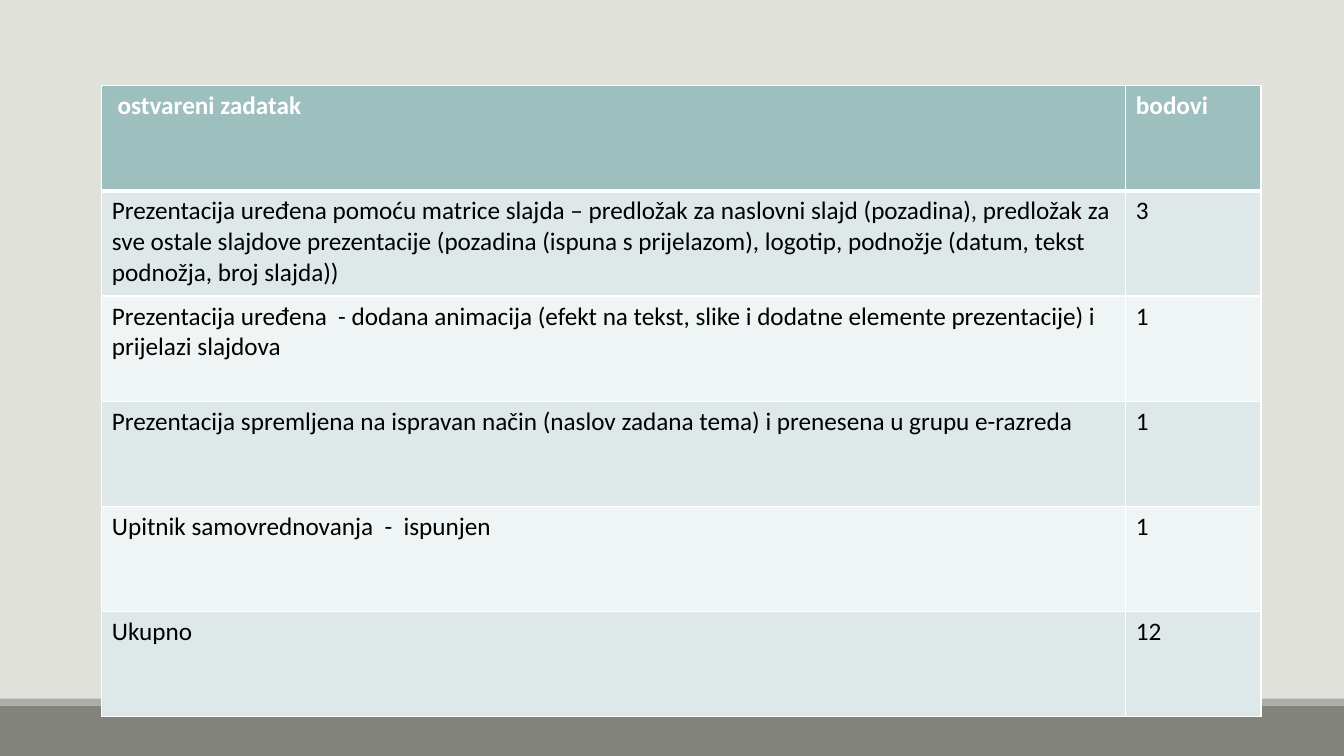
from lxml import etree
from pptx import Presentation
from pptx.dml.color import RGBColor
from pptx.enum.shapes import MSO_SHAPE
from pptx.oxml.ns import qn
from pptx.util import Pt

RECTANGLE = MSO_SHAPE.RECTANGLE
BACKGROUND = RGBColor(0xE1, 0xE1, 0xDB)
FLOOR = RGBColor(0x82, 0x84, 0x7C)
FLOOR_EDGE = RGBColor(0xAC, 0xAD, 0xA8)
HEADER = RGBColor(0x9D, 0xBF, 0xBE)
BANDS = (RGBColor(0xDF, 0xE8, 0xE8), RGBColor(0xEF, 0xF4, 0xF4))
WHITE = RGBColor(0xFF, 0xFF, 0xFF)
BLACK = RGBColor(0, 0, 0)
FONT = "Calibri"
FONT_SIZE = 18

PAGE_WIDTH, PAGE_HEIGHT = 960, 540
FLOOR_TOP, FLOOR_EDGE_HEIGHT = 504, 5
TABLE_BOX = (72.75, 61.25, 828, 450.75)
POINTS_WIDTH = 96.5

TASKS = (
    (" ostvareni zadatak", "bodovi"),
    ("Prezentacija uređena pomoću matrice slajda – predložak za naslovni slajd "
     "(pozadina), predložak za sve ostale slajdove prezentacije (pozadina (ispuna "
     "s prijelazom), logotip, podnožje (datum, tekst podnožja, broj slajda))", "3"),
    ("Prezentacija uređena  - dodana animacija (efekt na tekst, slike i dodatne "
     "elemente prezentacije) i prijelazi slajdova", "1"),
    ("Prezentacija spremljena na ispravan način (naslov zadana tema) i prenesena "
     "u grupu e-razreda", "1"),
    ("Upitnik samovrednovanja  -  ispunjen", "1"),
    ("Ukupno", "12"),
)


def add_bar(page, box, color):
    """Add a plain filled bar in the given box."""
    bar = page.shapes.add_shape(RECTANGLE, *(Pt(length) for length in box))
    bar.shadow.inherit = False
    bar.fill.solid()
    bar.fill.fore_color.rgb = color
    bar.line.fill.background()


def add_floor(page, box):
    """Add the dark floor strip with its lighter edge on top."""
    left, top, width, height = box
    add_bar(page, box, FLOOR)
    add_bar(page, (left, top - FLOOR_EDGE_HEIGHT, width, FLOOR_EDGE_HEIGHT), FLOOR_EDGE)


def set_borders(cell, top_width, bottom_width):
    """Draw white borders, with the given widths above and below the cell."""
    properties = cell._tc.get_or_add_tcPr()
    widths = {"a:lnL": 1, "a:lnR": 1, "a:lnT": top_width, "a:lnB": bottom_width}
    for tag, width in widths.items():
        line = etree.SubElement(properties, qn(tag), w=str(Pt(width)))
        fill = etree.SubElement(line, qn("a:solidFill"))
        etree.SubElement(fill, qn("a:srgbClr"), val=str(WHITE))


def format_cell(cell, text, row_index):
    """Fill one cell with its text, colours and borders."""
    is_header = row_index == 0
    set_borders(cell, 3 if row_index == 1 else 1, 3 if is_header else 1)
    cell.fill.solid()
    cell.fill.fore_color.rgb = HEADER if is_header else BANDS[(row_index - 1) % 2]
    cell.text_frame.text = text
    font = cell.text_frame.paragraphs[0].runs[0].font
    font.name = FONT
    font.size = Pt(FONT_SIZE)
    font.bold = is_header
    font.color.rgb = WHITE if is_header else BLACK


def add_task_table(page, box):
    """Add the table of tasks and points in the given box."""
    width, height = box[2:]
    frame = page.shapes.add_table(len(TASKS), 2, *(Pt(length) for length in box))
    table = frame.table
    table.columns[0].width = Pt(width - POINTS_WIDTH)
    table.columns[1].width = Pt(POINTS_WIDTH)
    for row_index, (row, texts) in enumerate(zip(table.rows, TASKS)):
        row.height = Pt(height / len(TASKS))
        for cell, text in zip(row.cells, texts):
            format_cell(cell, text, row_index)


def main():
    """Build and save the one-page deck."""
    deck = Presentation()
    deck.slide_width = Pt(PAGE_WIDTH)
    deck.slide_height = Pt(PAGE_HEIGHT)
    page = deck.slides.add_slide(deck.slide_layouts[6])
    page.background.fill.solid()
    page.background.fill.fore_color.rgb = BACKGROUND
    add_floor(page, (0, FLOOR_TOP, PAGE_WIDTH, PAGE_HEIGHT - FLOOR_TOP))
    add_task_table(page, TABLE_BOX)
    deck.save("out.pptx")


if __name__ == "__main__":
    main()
